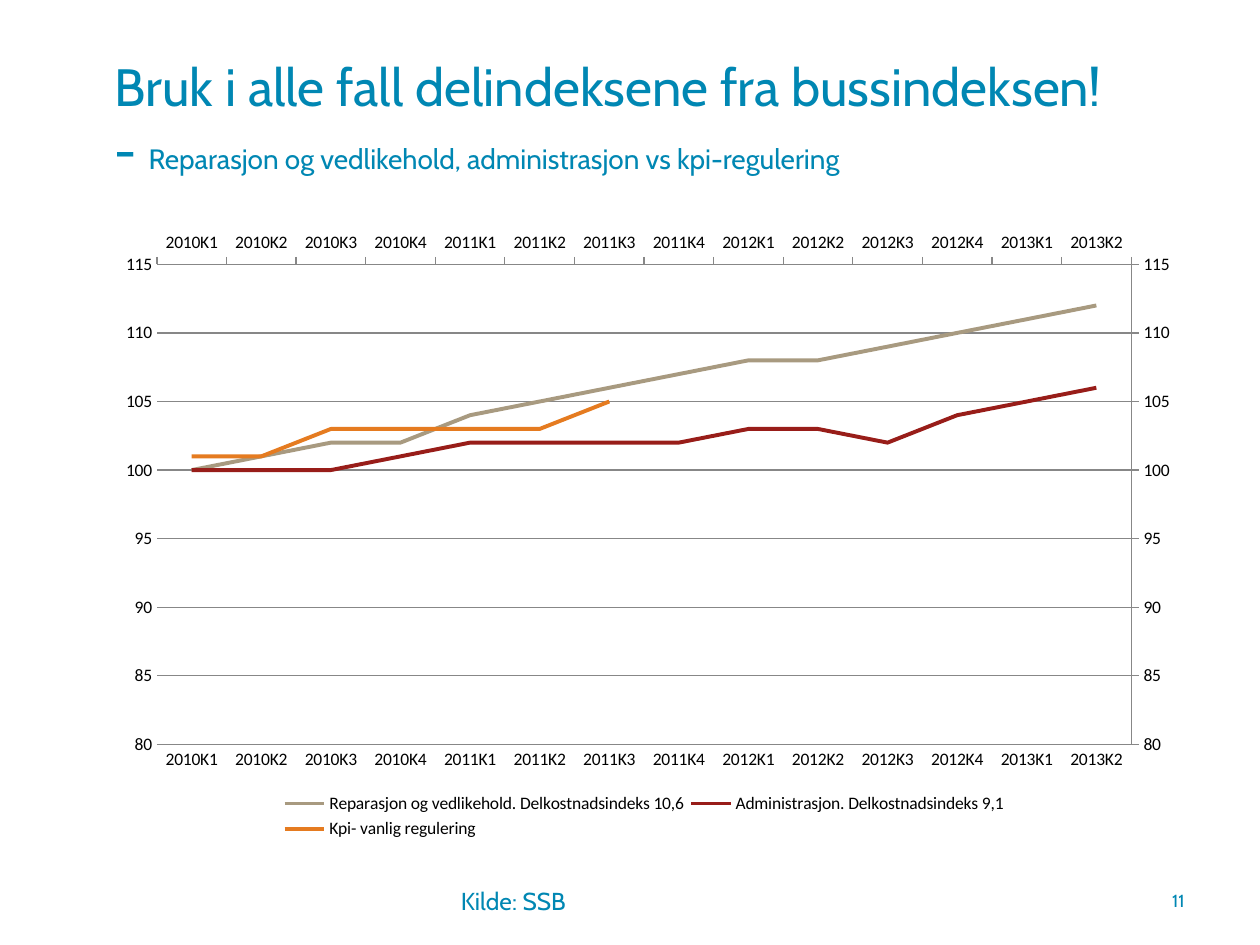
from copy import deepcopy
from dataclasses import dataclass

from lxml import etree
from pptx import Presentation
from pptx import util as u
from pptx.chart import axis as ax
from pptx.chart import data as cd
from pptx.dml.color import RGBColor
from pptx.enum import chart as ce
from pptx.enum import text as te
from pptx.oxml import ns

BLUE = RGBColor(0x00, 0x87, 0xB3)
BLACK = RGBColor(0, 0, 0)
GREY = RGBColor(0x87, 0x87, 0x87)
SAND = RGBColor(0xA8, 0x9A, 0x80)
RED = RGBColor(0x98, 0x1D, 0x19)
ORANGE = RGBColor(0xE5, 0x7B, 0x20)

QUARTERS = [f"{2010 + i // 4}K{i % 4 + 1}" for i in range(14)]


@dataclass
class Index:
    name: str
    values: list[int]
    color: RGBColor


@dataclass
class Box:
    left: float
    top: float
    width: float
    height: float

    def lengths(self) -> list[u.Cm]:
        return [u.Cm(n) for n in (self.left, self.top, self.width, self.height)]


INDICES = [
    Index("Reparasjon og vedlikehold. Delkostnadsindeks 10,6",
          [100, 101, 102, 102, 104, 105, 106, 107, 108, 108, 109, 110, 111, 112],
          SAND),
    Index("Administrasjon. Delkostnadsindeks 9,1",
          [100, 100, 100, 101, 102, 102, 102, 102, 103, 103, 102, 104, 105, 106],
          RED),
    Index("Kpi- vanlig regulering", [101, 101, 103, 103, 103, 103, 105], ORANGE),
]


def add_text(page, box: Box, *lines: list[tuple[str, float]],
             align=te.PP_ALIGN.LEFT) -> None:
    frame = page.shapes.add_textbox(*box.lengths()).text_frame
    frame.word_wrap = True
    frame.vertical_anchor = te.MSO_ANCHOR.MIDDLE
    para = frame.paragraphs[0]
    para.alignment = align
    for i, line in enumerate(lines):
        if i:
            para.add_line_break()
        for words, size in line:
            span = para.add_run()
            span.text = words
            span.font.size = u.Pt(size)
            span.font.name = "Cabin"
            span.font.color.rgb = BLUE


def set_line(line, color: RGBColor, width: float) -> None:
    line.color.rgb = color
    line.width = u.Pt(width)


def make_layout(**values: str | float):
    layout = etree.Element(ns.qn("c:layout"))
    manual = etree.SubElement(layout, ns.qn("c:manualLayout"))
    for name, value in values.items():
        etree.SubElement(manual, ns.qn(f"c:{name}")).set("val", str(value))
    return layout


def set_value(element, tag: str, value: str) -> None:
    element.find(ns.qn(f"c:{tag}")).set("val", value)


def add_secondary_axes(chart) -> None:
    """Move the last series to its own axes at the top and right."""
    area = chart.plots[0]._element.getparent()
    primary = area.find(ns.qn("c:lineChart"))
    secondary = deepcopy(primary)
    primary.addnext(secondary)
    tag = ns.qn("c:ser")
    primary.remove(primary.findall(tag)[-1])
    for series in secondary.findall(tag)[:-1]:
        secondary.remove(series)
    ids = ["50010", "50020"]
    for element, number in zip(secondary.findall(ns.qn("c:axId")), ids):
        element.set("val", number)
    category = deepcopy(chart.category_axis._element)
    value = deepcopy(chart.value_axis._element)
    chart.value_axis._element.addnext(value)
    value.addnext(category)
    pairs = [(category, ids, "t"), (value, ids[::-1], "r")]
    for element, (own, other), side in pairs:
        set_value(element, "axId", own)
        set_value(element, "crossAx", other)
        set_value(element, "axPos", side)
        set_value(element, "crosses", "max")
    for axis in (ax.CategoryAxis(category), ax.ValueAxis(value)):
        axis.has_major_gridlines = False
        axis.major_tick_mark = ce.XL_TICK_MARK.OUTSIDE
        set_line(axis.format.line, GREY, 0.75)


def add_index_chart(page, box: Box, indices: list[Index]) -> None:
    data = cd.CategoryChartData(number_format="General")
    data.categories = QUARTERS
    for index in indices:
        data.add_series(index.name, index.values)
    chart = page.shapes.add_chart(
        ce.XL_CHART_TYPE.LINE, *box.lengths(), data).chart
    chart.has_title = False
    chart.font.name = "Calibri"
    chart.font.size = u.Pt(10)
    chart.font.color.rgb = BLACK
    chart.plots[0].vary_by_categories = False
    for series, index in zip(chart.plots[0].series, indices):
        series.smooth = False
        series.marker.style = ce.XL_MARKER_STYLE.NONE
        set_line(series.format.line, index.color, 2.25)

    for axis in (chart.category_axis, chart.value_axis):
        axis.major_tick_mark = ce.XL_TICK_MARK.NONE
        axis.minor_tick_mark = ce.XL_TICK_MARK.NONE
    set_line(chart.category_axis.format.line, GREY, 0.75)
    scale = chart.value_axis
    scale.minimum_scale, scale.maximum_scale, scale.major_unit = 80, 115, 5
    scale.format.line.fill.background()
    set_line(scale.major_gridlines.format.line, GREY, 0.75)
    add_secondary_axes(chart)

    chart.has_legend = True
    legend = chart.legend
    legend.position = ce.XL_LEGEND_POSITION.BOTTOM
    legend.include_in_layout = False
    edges = {"xMode": "edge", "yMode": "edge"}
    area = chart.plots[0]._element.getparent()
    for old in area.findall(ns.qn("c:layout")):
        area.remove(old)
    area.insert(0, make_layout(layoutTarget="inner", **edges,
                               x=0.05, y=0.07, w=0.89, h=0.77))
    for old in legend._element.findall(ns.qn("c:layout")):
        legend._element.remove(old)
    legend._element.find(ns.qn("c:legendPos")).addnext(
        make_layout(**edges, x=0.16, y=0.91, w=0.67, h=0.09))


def main() -> None:
    deck = Presentation()
    deck.slide_width, deck.slide_height = u.Cm(25.4), u.Cm(19.05)
    page = deck.slides.add_slide(deck.slide_layouts[6])
    add_text(page, Box(2.06, 0.76, 22.07, 3.18),
             [("Bruk i alle fall delindeksene fra bussindeksen!", 30)],
             [("- ", 30),
              ("Reparasjon og vedlikehold, administrasjon vs kpi-regulering", 16)])
    add_index_chart(page, Box(2.06, 4.45, 22.07, 12.57), INDICES)
    add_text(page, Box(9.04, 17.65, 8.66, 1.02), [("Kilde: SSB", 14)])
    add_text(page, Box(22.43, 17.65, 1.7, 1.02), [("11", 10)],
             align=te.PP_ALIGN.RIGHT)
    deck.save("out.pptx")


if __name__ == "__main__":
    main()
